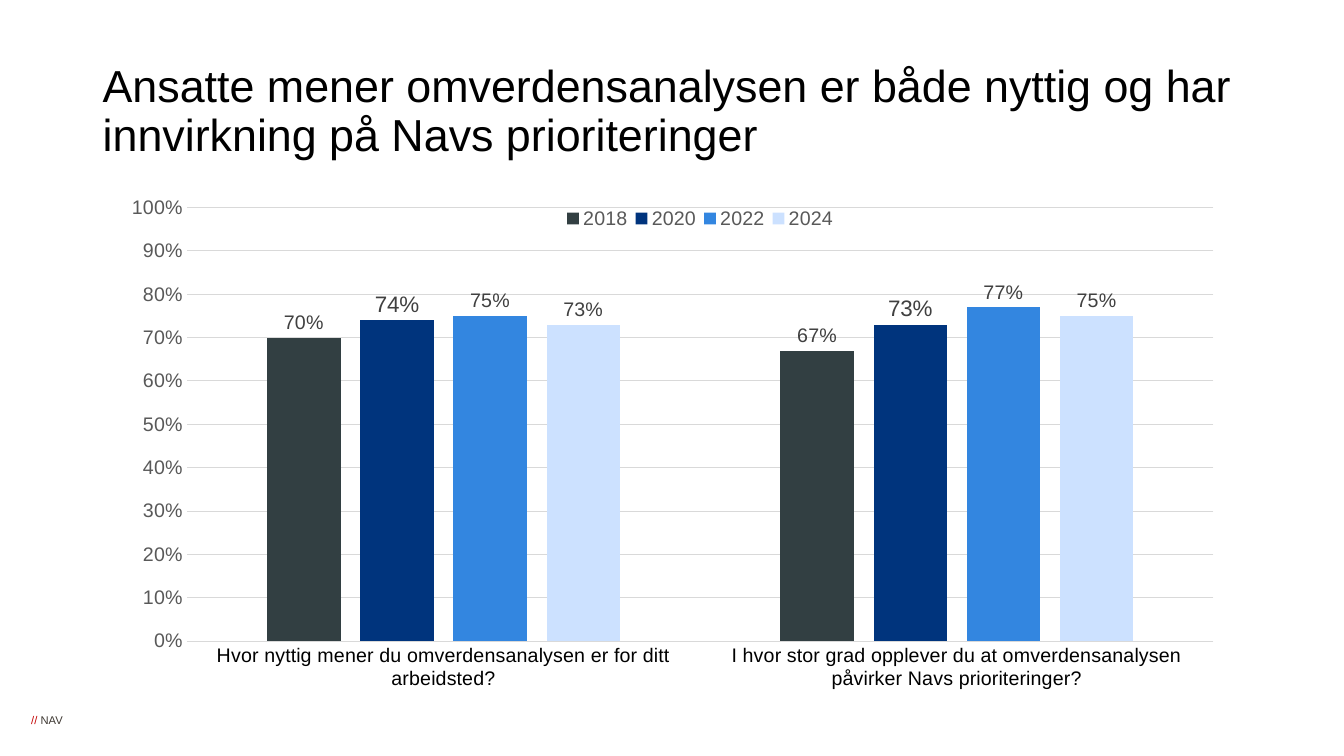
import pptx
import pptx.chart.data
import pptx.dml.color
import pptx.enum.chart
import pptx.enum.text
import pptx.oxml
import pptx.oxml.ns
import pptx.util

Inches = pptx.util.Inches
Pt = pptx.util.Pt
RGBColor = pptx.dml.color.RGBColor

FONT = "Arial"
BLACK = RGBColor(0x00, 0x00, 0x00)
RED = RGBColor(0xC3, 0x00, 0x00)
BROWN = RGBColor(0x3E, 0x38, 0x32)
AXIS_GREY = RGBColor(0x59, 0x59, 0x59)
LABEL_GREY = RGBColor(0x40, 0x40, 0x40)
GRID_GREY = RGBColor(0xD9, 0xD9, 0xD9)

QUESTIONS = [
    "Hvor nyttig mener du omverdensanalysen er for ditt arbeidsted?",
    "I hvor stor grad opplever du at omverdensanalysen påvirker Navs prioriteringer?",
]
# Year, share per question, bar colour, label size
YEARS = [
    ("2018", (0.70, 0.67), RGBColor(0x32, 0x3F, 0x42), 14),
    ("2020", (0.74, 0.73), RGBColor(0x00, 0x34, 0x7D), 16),
    ("2022", (0.75, 0.77), RGBColor(0x33, 0x86, 0xE0), 14),
    ("2024", (0.73, 0.75), RGBColor(0xCC, 0xE1, 0xFF), 14),
]


def style_font(font, size, color):
    font.name = FONT
    font.size = Pt(size)
    font.color.rgb = color


def style_line(line):
    line.color.rgb = GRID_GREY
    line.width = Pt(0.75)


def add_text_frame(slide, left, top, width, height, margin_x=0, margin_y=0):
    box = slide.shapes.add_textbox(Inches(left), Inches(top), Inches(width), Inches(height))
    text_frame = box.text_frame
    text_frame.margin_left = text_frame.margin_right = Inches(margin_x)
    text_frame.margin_top = text_frame.margin_bottom = Inches(margin_y)
    return text_frame


def add_title(slide, left, top, width, height):
    text_frame = add_text_frame(slide, left, top, width, height, 0.1, 0.05)
    text_frame.word_wrap = True
    text_frame.vertical_anchor = pptx.enum.text.MSO_ANCHOR.MIDDLE
    text_frame.text = ("Ansatte mener omverdensanalysen er både nyttig og har "
                       "innvirkning på Navs prioriteringer")
    paragraph = text_frame.paragraphs[0]
    paragraph.line_spacing = 0.9
    style_font(paragraph.runs[0].font, 32, BLACK)


def add_footer(slide, left, top, width, height):
    text_frame = add_text_frame(slide, left, top, width, height)
    text_frame.word_wrap = False
    for text, color in (("// ", RED), ("NAV", BROWN)):
        run = text_frame.paragraphs[0].add_run()
        run.text = text
        style_font(run.font, 8, color)


def place_in_chart(parent, index, x, y, w, h, inner=False):
    """Give the plot area or legend a fixed place, as fractions of the chart."""
    for layout in parent.findall(pptx.oxml.ns.qn("c:layout")):
        parent.remove(layout)
    target = '<c:layoutTarget val="inner"/>' if inner else ""
    modes = "".join(f'<c:{side}Mode val="edge"/>' for side in "xy")
    sizes = "".join(f'<c:{name} val="{value}"/>'
                    for name, value in (("x", x), ("y", y), ("w", w), ("h", h)))
    parent.insert(index, pptx.oxml.parse_xml(
        f'<c:layout {pptx.oxml.ns.nsdecls("c")}><c:manualLayout>'
        f"{target}{modes}{sizes}</c:manualLayout></c:layout>"))


def add_survey_chart(slide, left, top, width, height):
    chart_data = pptx.chart.data.CategoryChartData(number_format="0%")
    chart_data.categories = QUESTIONS
    for year, shares, _, _ in YEARS:
        chart_data.add_series(year, shares)
    chart = slide.shapes.add_chart(
        pptx.enum.chart.XL_CHART_TYPE.COLUMN_CLUSTERED,
        Inches(left), Inches(top), Inches(width), Inches(height), chart_data).chart
    chart.has_title = False
    style_font(chart.font, 10, BLACK)

    # Bars and their labels
    plot = chart.plots[0]
    plot.vary_by_categories = False
    plot.gap_width = 219
    plot.overlap = -27
    for series, (_, _, color, label_size) in zip(plot.series, YEARS):
        series.format.fill.solid()
        series.format.fill.fore_color.rgb = color
        labels = series.data_labels
        labels.show_value = True
        labels.number_format = "0%"
        labels.number_format_is_linked = False
        labels.position = pptx.enum.chart.XL_LABEL_POSITION.OUTSIDE_END
        style_font(labels.font, label_size, LABEL_GREY)

    # Axes
    category_axis, value_axis = chart.category_axis, chart.value_axis
    for axis, color in ((category_axis, BLACK), (value_axis, AXIS_GREY)):
        axis.major_tick_mark = axis.minor_tick_mark = pptx.enum.chart.XL_TICK_MARK.NONE
        style_font(axis.tick_labels.font, 14, color)
    style_line(category_axis.format.line)
    value_axis.minimum_scale, value_axis.maximum_scale = 0, 1
    value_axis.major_unit = 0.1
    value_axis.tick_labels.number_format = "0%"
    value_axis.tick_labels.number_format_is_linked = False
    value_axis.format.line.fill.background()
    style_line(value_axis.major_gridlines.format.line)

    # Legend over the top of the plot
    chart.has_legend = True
    legend = chart.legend
    legend.position = pptx.enum.chart.XL_LEGEND_POSITION.BOTTOM
    legend.include_in_layout = False
    style_font(legend.font, 14, AXIS_GREY)

    chart_space = plot._element.getparent().getparent()
    place_in_chart(chart_space.find(pptx.oxml.ns.qn("c:plotArea")), 0,
                   0.07, 0.04, 0.91, 0.785, inner=True)
    place_in_chart(chart_space.find(pptx.oxml.ns.qn("c:legend")), 1,
                   0.4, 0.03, 0.25, 0.06)


def main():
    presentation = pptx.Presentation()
    presentation.slide_width = Inches(13.33)
    presentation.slide_height = Inches(7.5)
    slide = presentation.slides.add_slide(presentation.slide_layouts[6])
    add_footer(slide, 0.31, 7.08, 0.35, 0.13)
    add_title(slide, 0.92, 0.53, 11.5, 1.17)
    add_survey_chart(slide, 1.07, 1.84, 11.19, 5.48)
    presentation.save("out.pptx")


if __name__ == "__main__":
    main()
